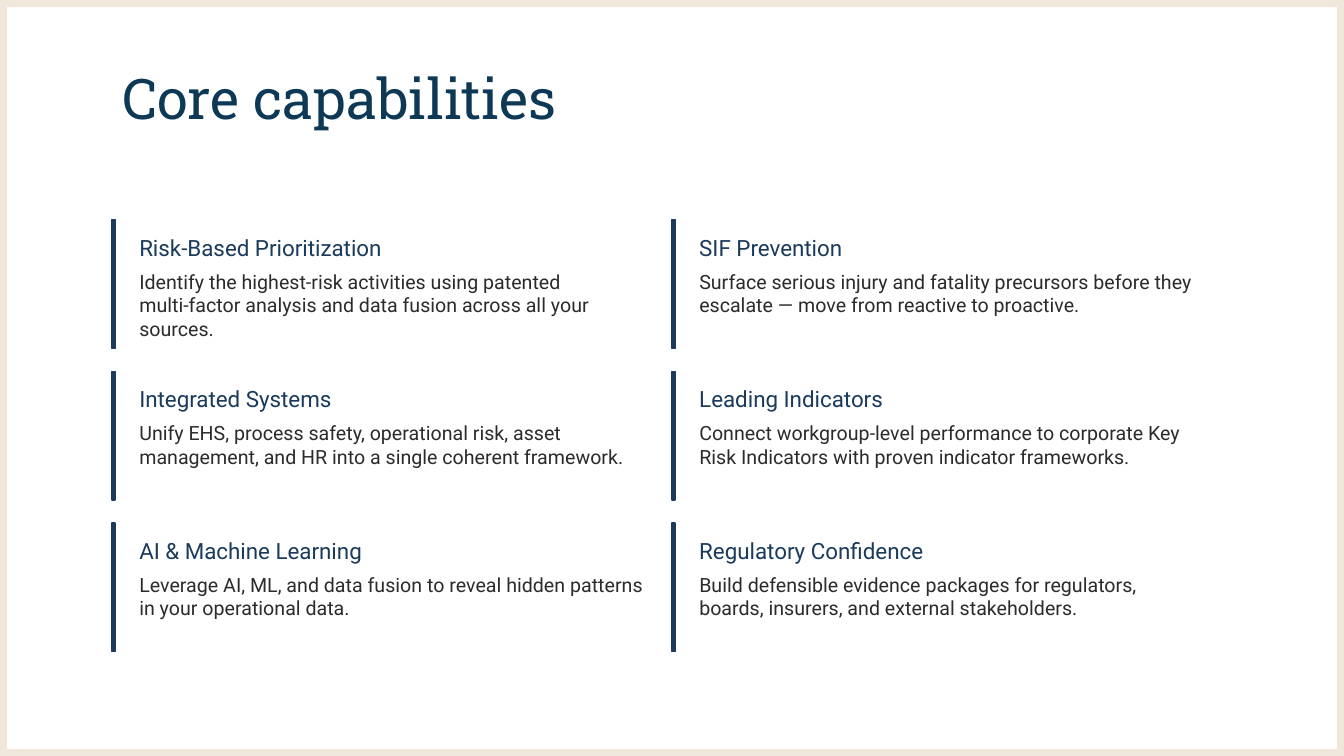
"""Build the core capabilities slide: a title over a two by three grid of items."""
from dataclasses import dataclass

from pptx import Presentation
from pptx.dml.color import RGBColor
from pptx.enum.shapes import MSO_SHAPE
from pptx.enum.text import MSO_ANCHOR, MSO_AUTO_SIZE, PP_ALIGN
from pptx.util import Pt


@dataclass(frozen=True)
class Theme:
    paper: RGBColor = RGBColor.from_string("FFFFFF")
    frame: RGBColor = RGBColor.from_string("F0E8DB")
    title: RGBColor = RGBColor.from_string("0E3956")
    navy: RGBColor = RGBColor.from_string("1B3A5C")
    ink: RGBColor = RGBColor.from_string("2B2B2B")
    title_size: int = 40
    heading_size: int = 16
    body_size: int = 14
    title_font: str = "Roboto Slab"
    text_font: str = "Roboto"


THEME = Theme()
WIDTH, HEIGHT = 960, 540
LEFT, TOP = 80, 157
COLUMN_PITCH, ROW_PITCH = 400, 108.3
COLUMNS = 2

CAPABILITIES = [
    ("Risk-Based Prioritization",
     "Identify the highest-risk activities using patented\n"
     "multi-factor analysis and data fusion across all your sources."),
    ("SIF Prevention",
     "Surface serious injury and fatality precursors before they escalate "
     "— move from reactive to proactive."),
    ("Integrated Systems",
     "Unify EHS, process safety, operational risk, asset management, "
     "and HR into a single coherent framework."),
    ("Leading Indicators",
     "Connect workgroup-level performance to corporate Key Risk Indicators "
     "with proven indicator frameworks."),
    ("AI & Machine Learning",
     "Leverage AI, ML, and data fusion to reveal hidden patterns "
     "in your operational data."),
    ("Regulatory Confidence",
     "Build defensible evidence packages for regulators, boards, insurers, "
     "and external stakeholders."),
]


def write(tf, text, anchor, color, **font):
    """Put one left-aligned paragraph in a text frame."""
    frame_format = {"word_wrap": True, "auto_size": MSO_AUTO_SIZE.NONE,
                    "vertical_anchor": anchor}
    for name, value in frame_format.items():
        setattr(tf, name, value)
    p = tf.paragraphs[0]
    p.text = text
    p.alignment = PP_ALIGN.LEFT
    for r in p.runs:
        for name, value in font.items():
            setattr(r.font, name, value)
        r.font.color.rgb = color
    return p


def add_rect(s, left, top, width, height, line_color, line_width):
    """Add a plain rectangle with an outline."""
    sp = s.shapes.add_shape(MSO_SHAPE.RECTANGLE, Pt(left), Pt(top), Pt(width), Pt(height))
    sp.shadow.inherit = False
    sp.line.color.rgb = line_color
    sp.line.width = Pt(line_width)
    return sp


prs = Presentation()
prs.slide_width, prs.slide_height = Pt(WIDTH), Pt(HEIGHT)
s = prs.slides.add_slide(prs.slide_layouts[5])
s.background.fill.solid()
s.background.fill.fore_color.rgb = THEME.paper

title = s.shapes.title
place = {"left": 80, "top": 15, "width": 781, "height": 115}
for name, value in place.items():
    setattr(title, name, Pt(value))
p = write(title.text_frame, "Core capabilities", MSO_ANCHOR.MIDDLE, THEME.title,
          name=THEME.title_font, size=Pt(THEME.title_size))
p.line_spacing = 0.9

border = add_rect(s, 0, 0, WIDTH, HEIGHT, THEME.frame, 10)
border.fill.background()
title._element.addprevious(border._element)

for i, (heading, body) in enumerate(CAPABILITIES):
    row, column = divmod(i, COLUMNS)
    x, y = LEFT + column * COLUMN_PITCH, TOP + row * ROW_PITCH
    bar = add_rect(s, x, y, 2.2, 92, THEME.navy, 1)
    bar.fill.solid()
    bar.fill.fore_color.rgb = THEME.navy

    lines = [
        (heading, 7.2, 263, 25, MSO_ANCHOR.MIDDLE, THEME.navy, THEME.heading_size),
        (body, 35.6, 361, 55, MSO_ANCHOR.TOP, THEME.ink, THEME.body_size),
    ]
    for text, offset, width, height, anchor, color, size in lines:
        sp = s.shapes.add_textbox(Pt(x + 19.5), Pt(y + offset), Pt(width), Pt(height))
        tf = sp.text_frame
        for side in ("left", "top", "right", "bottom"):
            setattr(tf, f"margin_{side}", 0)
        write(tf, text, anchor, color, name=THEME.text_font, size=Pt(size))

prs.save("out.pptx")
